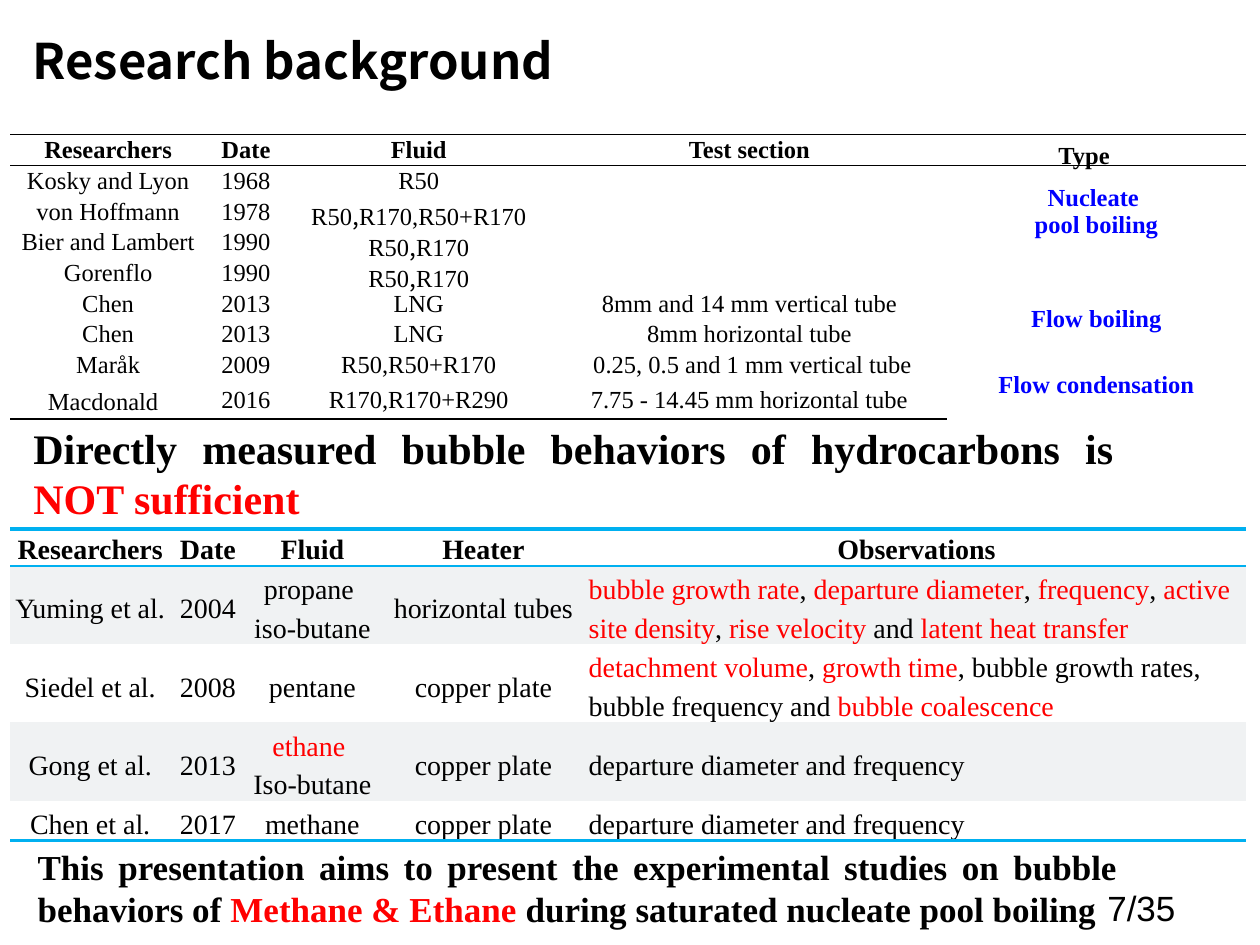
import pptx
import pptx.util
import pptx.dml.color
import pptx.enum.text
import pptx.oxml
import pptx.oxml.ns
from dataclasses import dataclass

Pt = pptx.util.Pt
ALIGN = pptx.enum.text.PP_ALIGN
ANCHOR = pptx.enum.text.MSO_ANCHOR


@dataclass(frozen=True)
class Theme:
    heading: str = "Noto Sans CJK SC"
    body: str = "Times New Roman"
    number: str = "Arial"
    spacer: str = "DejaVu Sans"
    black: str = "000000"
    red: str = "FF0000"
    blue: str = "0000FF"
    cyan: str = "00B0F0"
    band: str = "F0F2F3"
    title_size: float = 28
    claim_size: float = 24
    aim_size: float = 20
    spacer_size: float = 18
    observation_size: float = 16
    study_size: float = 14


T = Theme()
RED = {"color": T.red}

STUDIES = [
    ("Researchers", "Date", "Fluid", "Test section", "Type\u3000".replace("\u3000", "　")),
    ("Kosky and Lyon", "1968", "R50", "", "Nucleate \npool boiling"),
    ("von Hoffmann", "1978", "R50*,*R170,R50+R170", "", ""),
    ("Bier and Lambert", "1990", "R50*,*R170", "", ""),
    ("Gorenflo", "1990", "R50*,*R170", "", ""),
    ("Chen", "2013", "LNG", "8mm and 14 mm vertical tube", "Flow boiling"),
    ("Chen", "2013", "LNG", "8mm horizontal tube", ""),
    ("Maråk", "2009", "R50,R50+R170", " 0.25, 0.5 and 1 mm vertical tube",
     "Flow condensation"),
    ("Macdonald* *", "2016", "R170,R170+R290", "7.75 - 14.45 mm horizontal tube", ""),
]
TYPE_SPANS = [(1, 3), (5, 6), (7, 8)]

OBSERVATIONS = [
    ("Researchers", "Date", "Fluid", "Heater", "Observations"),
    ("Yuming et al.", "2004", "propane \niso-butane", "horizontal tubes",
     "*bubble growth rate*,* departure diameter*,* frequency*,* active site density*,"
     "* rise velocity* and *latent heat transfer*"),
    ("Siedel et al.", "2008", "pentane", "copper plate",
     "*detachment volume*, *growth time*, bubble growth rates, "
     "bubble frequency and *bubble coalescence*"),
    ("Gong et al.", "2013", "*ethane *\nIso-butane", "copper plate",
     "departure diameter and frequency"),
    ("Chen et al.", "2017", "methane", "copper plate", "departure diameter and frequency"),
]


def rgb(value):
    return pptx.dml.color.RGBColor.from_string(value)


def format_run(r, size, font=T.body, color=T.black, bold=False):
    r.font.size, r.font.name, r.font.bold = Pt(size), font, bold
    r.font.color.rgb = rgb(color)


def write(tf, text, align, accent=RED, spacing=None, **style):
    """Fill a text frame; parts between asterisks take the accent style."""
    for i, line in enumerate(text.split("\n")):
        p = tf.paragraphs[0] if i == 0 else tf.add_paragraph()
        p.alignment = align
        if spacing:
            p.line_spacing = Pt(spacing)
        for j, part in enumerate(line.split("*")):
            if part:
                r = p.add_run()
                r.text = part
                format_run(r, **{**style, **(accent if j % 2 else {})})
        if not line:
            p._p.get_or_add_endParaRPr().set("sz", str(int(style["size"] * 100)))


def add_text(s, box, text, align, grow=True, **style):
    tf = s.shapes.add_textbox(*map(Pt, box)).text_frame
    tf.word_wrap = True
    if grow:
        tf.auto_size = pptx.enum.text.MSO_AUTO_SIZE.SHAPE_TO_FIT_TEXT
    write(tf, text, align, **style)


def set_borders(cell, **lines):
    """Give each named side (lnL, lnR, lnT, lnB) its (colour, width), or no line."""
    tcPr = cell._tc.get_or_add_tcPr()
    for i, side in enumerate(("lnL", "lnR", "lnT", "lnB")):
        color, width = lines.get(side, (None, 0))
        fill = (f'<a:solidFill><a:srgbClr val="{color}"/></a:solidFill>'
                if color else "<a:noFill/>")
        tcPr.insert(i, pptx.oxml.parse_xml(
            f'<a:{side} {pptx.oxml.ns.nsdecls("a")} w="{int(Pt(width))}">{fill}</a:{side}>'))


def add_grid(s, left, top, widths, heights):
    """Add a table without a banded style, with tight cells."""
    table = s.shapes.add_table(len(heights), len(widths), Pt(left), Pt(top),
                               Pt(sum(widths)), Pt(sum(heights))).table
    table.first_row = table.horz_banding = False
    for col, width in zip(table.columns, widths):
        col.width = Pt(width)
    for row, height in zip(table.rows, heights):
        row.height = Pt(height)
    for cell in table.iter_cells():
        cell.fill.background()
        cell.vertical_anchor = ANCHOR.MIDDLE
        cell.margin_left = cell.margin_right = cell.margin_top = Pt(0.7)
        cell.margin_bottom = 0
    return table


def row_borders(row, last, color, outer, inner):
    """Rule the top and bottom of the table and the line under its header."""
    lines = {}
    if row <= 1:
        lines["lnT"] = (color, inner if row else outer)
    if row in (0, last):
        lines["lnB"] = (color, outer if row else inner)
    return lines


def add_studies(s):
    table = add_grid(s, 5.8, 77, [112, 45.5, 152, 226, 170.5], [17.5] * 8 + [22])
    comma = {"font": T.heading}
    spacer = {"font": T.spacer, "size": T.spacer_size}
    for i, row in enumerate(STUDIES):
        for j, text in enumerate(row):
            cell = table.cell(i, j)
            is_type = j == 4 and i > 0
            write(cell.text_frame, text, ALIGN.CENTER, spacer if j == 0 else comma,
                  size=T.study_size, bold=i == 0 or is_type,
                  color=T.blue if is_type else T.black)
            set_borders(cell, **row_borders(i, len(STUDIES) - 1, T.black, 1, 1))
    for first, last in TYPE_SPANS:
        for i in range(first + 1, last + 1):
            table.cell(i, 4).text_frame.text = ""
        table.cell(first, 4).merge(table.cell(last, 4))


def add_observations(s):
    table = add_grid(s, 5.8, 302.4, [91.5, 43, 76.5, 119, 376], [21] + [44.5] * 3 + [22.5])
    for i, row in enumerate(OBSERVATIONS):
        for j, text in enumerate(row):
            cell = table.cell(i, j)
            write(cell.text_frame, text, ALIGN.LEFT if i and j == 4 else ALIGN.CENTER,
                  spacing=22 if i else 20, size=T.observation_size, bold=i == 0)
            if i % 2:
                cell.fill.solid()
                cell.fill.fore_color.rgb = rgb(T.band)
            set_borders(cell, **row_borders(i, len(OBSERVATIONS) - 1, T.cyan, 2.25, 1))


def add_title(s, text):
    sp = s.shapes.title
    sp.left, sp.top, sp.width, sp.height = map(Pt, (11.5, 13.7, 326, 41))
    tf = sp.text_frame
    tf.vertical_anchor = ANCHOR.MIDDLE
    tf.word_wrap = False
    write(tf, text, ALIGN.LEFT, size=T.title_size, font=T.heading, bold=True)


def main():
    prs = pptx.Presentation()
    prs.slide_width, prs.slide_height = Pt(720), Pt(540)
    s = prs.slides.add_slide(prs.slide_layouts[5])
    add_title(s, "Research background")
    add_observations(s)
    add_text(s, (12, 237.6, 631.5, 65.5),
             "Directly measured bubble behaviors of hydrocarbons is *NOT sufficient*",
             ALIGN.JUSTIFY, size=T.claim_size, bold=True)
    add_text(s, (14.4, 479.5, 631.5, 55.5),
             "This presentation aims to present the experimental studies on bubble behaviors of "
             "*Methane & Ethane *during saturated nucleate pool boiling",
             ALIGN.JUSTIFY, size=T.aim_size, bold=True)
    add_studies(s)
    add_text(s, (625.7, 503.3, 67.7, 27.4), "7/35", ALIGN.LEFT, grow=False,
             size=T.aim_size, font=T.number)
    prs.save("out.pptx")


if __name__ == "__main__":
    main()
